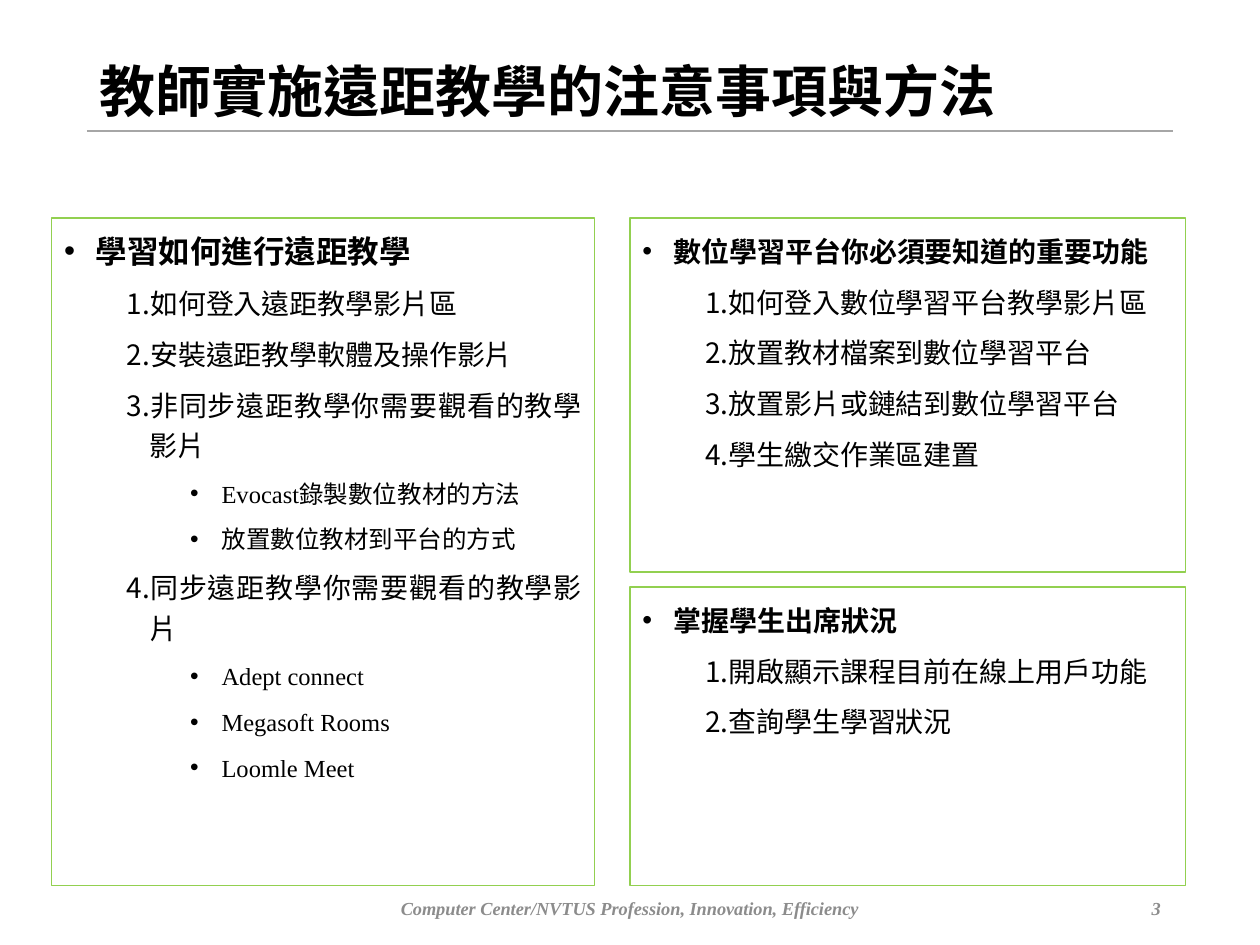
from dataclasses import dataclass

from lxml.etree import SubElement
from pptx import Presentation
from pptx.dml.color import RGBColor
from pptx.enum.lang import MSO_LANGUAGE_ID
from pptx.enum.shapes import MSO_CONNECTOR, MSO_SHAPE
from pptx.enum.text import MSO_ANCHOR, PP_ALIGN
from pptx.oxml.ns import qn
from pptx.util import Inches, Pt


@dataclass(frozen=True)
class Theme:
    font: str = "Times New Roman"
    ink: RGBColor = RGBColor(0, 0, 0)
    muted: RGBColor = RGBColor(0x8C, 0x8C, 0x8C)
    rule: RGBColor = RGBColor(0xA6, 0xA6, 0xA6)
    frame: RGBColor = RGBColor(0x92, 0xD0, 0x50)
    line_width: float = 0.75
    title_size: float = 32
    lead_size: float = 18
    item_size: float = 16
    detail_size: float = 14
    footer_size: float = 10.5


THEME = Theme()

# Left margin and hanging indent in inches for heading, item and detail
INDENTS = ((0.25, 0.25), (0.68, 0.18), (1.25, 0.25))

METHODS = [
    (0, "學習如何進行遠距教學"),
    (1, "如何登入遠距教學影片區"),
    (1, "安裝遠距教學軟體及操作影片"),
    (1, "非同步遠距教學你需要觀看的教學影片"),
    (2, "Evocast錄製數位教材的方法"),
    (2, "放置數位教材到平台的方式"),
    (1, "同步遠距教學你需要觀看的教學影片"),
    (2, "Adept connect"),
    (2, "Megasoft Rooms"),
    (2, "Loomle Meet"),
]
PLATFORM = [
    (0, "數位學習平台你必須要知道的重要功能"),
    (1, "如何登入數位學習平台教學影片區"),
    (1, "放置教材檔案到數位學習平台"),
    (1, "放置影片或鏈結到數位學習平台"),
    (1, "學生繳交作業區建置"),
]
ATTENDANCE = [
    (0, "掌握學生出席狀況"),
    (1, "開啟顯示課程目前在線上用戶功能"),
    (1, "查詢學生學習狀況"),
]


def style_font(font, size, color, bold=False, italic=False):
    font.name = THEME.font
    font.size = Pt(size)
    font.color.rgb = color
    font.bold = bold
    font.italic = italic
    font.language_id = MSO_LANGUAGE_ID.TRADITIONAL_CHINESE


def add_label(slide, box, text, size, color, align, italic=False):
    """Place one bold line of text, centred vertically in its box."""
    frame = slide.shapes.add_textbox(*map(Inches, box)).text_frame
    frame.word_wrap = True
    frame.vertical_anchor = MSO_ANCHOR.MIDDLE
    label = frame.paragraphs[0]
    label.text = text
    label.alignment = align
    style_font(label.font, size, color, bold=True, italic=italic)
    return label


def add_title(slide, box):
    left, top, width, height = box
    title = add_label(slide, box, "教師實施遠距教學的注意事項與方法",
                      THEME.title_size, THEME.ink, PP_ALIGN.LEFT)
    title.line_spacing = 0.9
    bottom = Inches(top + height)
    rule = slide.shapes.add_connector(
        MSO_CONNECTOR.STRAIGHT, Inches(left), bottom, Inches(left + width), bottom)
    rule.line.color.rgb = THEME.rule
    rule.line.width = Pt(THEME.line_width)
    SubElement(rule._element.spPr, qn("a:effectLst"))


def set_marker(paragraph, level):
    """Indent a paragraph and number it at level 1, bullet it elsewhere."""
    margin, hanging = INDENTS[level]
    paragraph.level = level
    properties = paragraph._p.get_or_add_pPr()
    properties.set("marL", str(Inches(margin)))
    properties.set("indent", str(-Inches(hanging)))
    if level == 1:
        SubElement(properties, qn("a:buAutoNum"), type="arabicPeriod")
    else:
        SubElement(properties, qn("a:buFont"), typeface="Arial")
        SubElement(properties, qn("a:buChar"), char="•")


def add_panel(slide, box, entries, heading_size, heading_spacing):
    panel = slide.shapes.add_shape(MSO_SHAPE.RECTANGLE, *map(Inches, box))
    panel.shadow.inherit = False
    panel.fill.background()
    panel.line.color.rgb = THEME.frame
    panel.line.width = Pt(THEME.line_width)
    frame = panel.text_frame
    frame.word_wrap = True
    frame.vertical_anchor = MSO_ANCHOR.TOP
    sizes = (heading_size, THEME.item_size, THEME.detail_size)
    for index, (level, text) in enumerate(entries):
        entry = frame.add_paragraph() if index else frame.paragraphs[0]
        entry.text = text
        entry.alignment = PP_ALIGN.JUSTIFY
        entry.line_spacing = 1.2 if level else heading_spacing
        entry.space_before = Pt(6)
        set_marker(entry, level)
        style_font(entry.font, sizes[level], THEME.ink, bold=level == 0)


def add_footer(slide, box):
    left, top, width, height = box
    motto_width, number_width = 4.41, 2.01
    motto_left = left + (width - motto_width) / 2
    number_left = left + width - number_width
    for x, part_width, text, align in (
        (motto_left, motto_width,
         "Computer Center/NVTUS Profession, Innovation, Efficiency", PP_ALIGN.CENTER),
        (number_left, number_width, "3", PP_ALIGN.RIGHT),
    ):
        add_label(slide, (x, top, part_width, height), text,
                  THEME.footer_size, THEME.muted, align, italic=True)


def main():
    deck = Presentation()
    deck.slide_width, deck.slide_height = Inches(10), Inches(7.5)
    slide = deck.slides.add_slide(deck.slide_layouts[6])
    add_title(slide, (0.69, 0.46, 8.62, 0.58))
    add_panel(slide, (0.41, 1.73, 4.31, 5.3), METHODS, THEME.lead_size, 1.2)
    add_panel(slide, (5, 1.73, 4.41, 2.81), PLATFORM, THEME.item_size, 1.3)
    add_panel(slide, (5, 4.66, 4.41, 2.37), ATTENDANCE, THEME.item_size, 1.3)
    add_footer(slide, (0.69, 7.06, 8.62, 0.29))
    deck.save("out.pptx")


if __name__ == "__main__":
    main()
